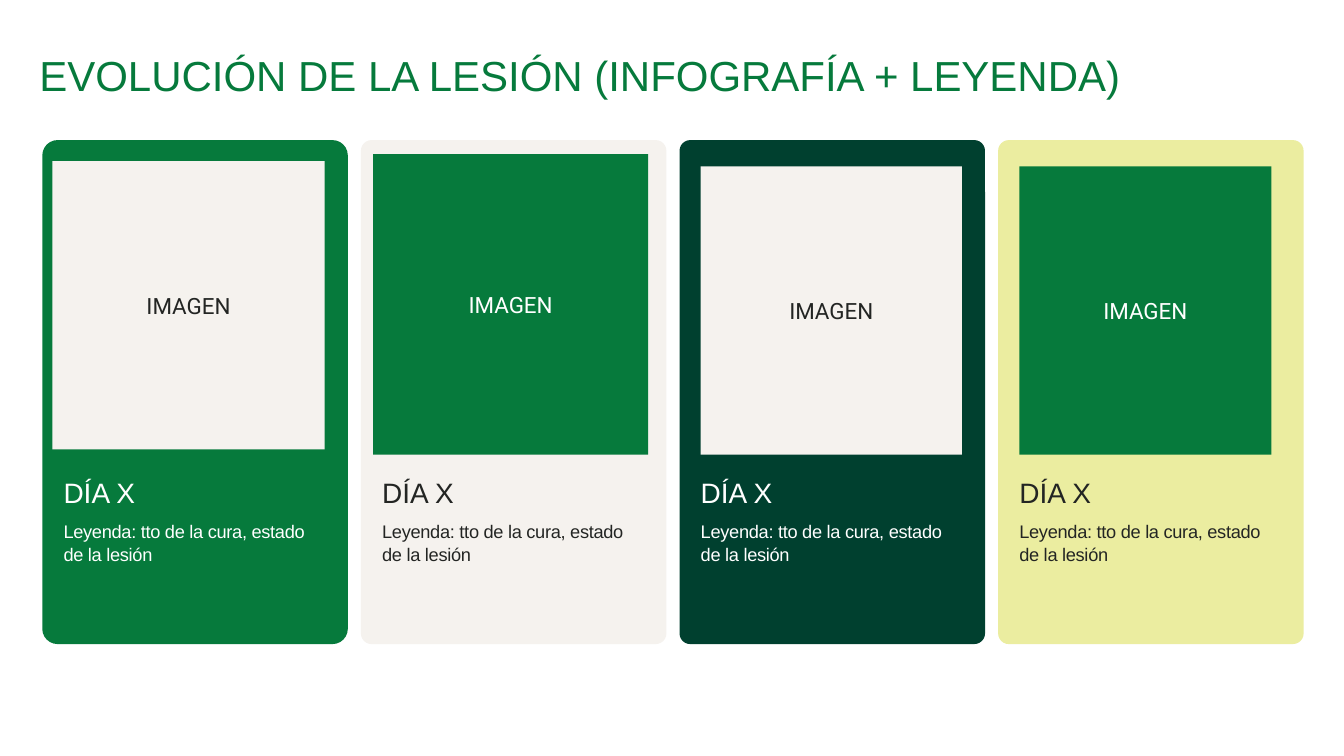
from pptx import Presentation
from pptx.dml.color import RGBColor
from pptx.enum.shapes import MSO_SHAPE
from pptx.enum.text import MSO_ANCHOR, PP_ALIGN
from pptx.util import Inches, Pt

COLORS = {
    "green": "067A3C",
    "dark": "00402F",
    "sand": "F5F2EE",
    "lime": "EBEDA0",
    "ink": "232523",
    "white": "FFFFFF",
}

# Card grid, in inches
GRID_LEFT, COLUMN_STEP = 0.42, 3.16
CARD_TOP, CARD_WIDTH, CARD_HEIGHT = 1.39, 3.03, 5.0
TEXT_INSET, TEXT_WIDTH = 0.21, 2.59

# Card fill, text colour, corner ratio, then image fill, label colour and
# image box (offset in its column, top, width, height)
CARDS = [
    ("green", "white", 0.05, "sand", "ink", (0.1, 1.6, 2.7, 2.86)),
    ("sand", "ink", 0.035, "green", "white", (0.12, 1.53, 2.73, 2.98)),
    ("dark", "white", 0.035, "sand", "ink", (0.21, 1.65, 2.59, 2.86)),
    ("lime", "ink", 0.035, "green", "white", (0.21, 1.65, 2.5, 2.86)),
]


class SlideBuilder:
    """Holds the style and the current slide."""

    def __init__(self, presentation):
        self.slide = presentation.slides.add_slide(presentation.slide_layouts[5])

    def place(self, column, offset, top, width, height):
        left = GRID_LEFT + column * COLUMN_STEP + offset
        return [Inches(length) for length in (left, top, width, height)]

    def set_text(self, shape, text, size, color, font="Arial", align=PP_ALIGN.LEFT,
                 anchor=MSO_ANCHOR.TOP, line_spacing=1.0, tracking=None):
        frame = shape.text_frame
        frame.word_wrap = True
        frame.vertical_anchor = anchor
        frame.margin_left = frame.margin_right = 0
        frame.margin_top = frame.margin_bottom = 0
        paragraph = frame.paragraphs[0]
        paragraph.alignment = align
        paragraph.line_spacing = line_spacing
        paragraph.space_before = Pt(0)
        run = paragraph.add_run()
        run.text = text
        run.font.name = font
        run.font.size = Pt(size)
        run.font.color.rgb = RGBColor.from_string(COLORS[color])
        if tracking is not None:
            run._r.get_or_add_rPr().set("spc", str(tracking))

    def title(self, text):
        shape = self.slide.shapes.title
        shape.left, shape.top = Inches(0.39), Inches(0.49)
        shape.width, shape.height = Inches(12.53), Inches(0.67)
        self.set_text(shape, text, 30, "green")

    def block(self, kind, box, fill):
        shape = self.slide.shapes.add_shape(kind, *box)
        shape.shadow.inherit = False
        shape.fill.solid()
        shape.fill.fore_color.rgb = RGBColor.from_string(COLORS[fill])
        shape.line.fill.background()
        return shape

    def card(self, column, fill, corner):
        box = self.place(column, 0, CARD_TOP, CARD_WIDTH, CARD_HEIGHT)
        shape = self.block(MSO_SHAPE.ROUNDED_RECTANGLE, box, fill)
        shape.adjustments[0] = corner

    def image_box(self, column, box, fill, color):
        shape = self.block(MSO_SHAPE.RECTANGLE, self.place(column, *box), fill)
        self.set_text(shape, "IMAGEN", 16, color, font="Roboto",
                      align=PP_ALIGN.CENTER, anchor=MSO_ANCHOR.MIDDLE)

    def text(self, column, top, height, text, size, color, **style):
        box = self.place(column, TEXT_INSET, top, TEXT_WIDTH, height)
        shape = self.slide.shapes.add_textbox(*box)
        self.set_text(shape, text, size, color, **style)


def main():
    presentation = Presentation()
    presentation.slide_width = Inches(13.33)
    presentation.slide_height = Inches(7.5)
    builder = SlideBuilder(presentation)

    # Title
    builder.title("EVOLUCIÓN DE LA LESIÓN (INFOGRAFÍA + LEYENDA)")

    # One card per day: background, image area, day and legend
    for column, (fill, color, corner, image_fill, label, box) in enumerate(CARDS):
        builder.card(column, fill, corner)
        builder.image_box(column, box, image_fill, label)
        builder.text(column, 4.7, 0.36, "DÍA X", 20, color,
                     anchor=MSO_ANCHOR.MIDDLE)
        builder.text(column, 5.15, 0.96,
                     "Leyenda: tto de la cura, estado de la lesión", 13, color,
                     line_spacing=1.05, tracking=-20)

    presentation.save("out.pptx")


if __name__ == "__main__":
    main()
